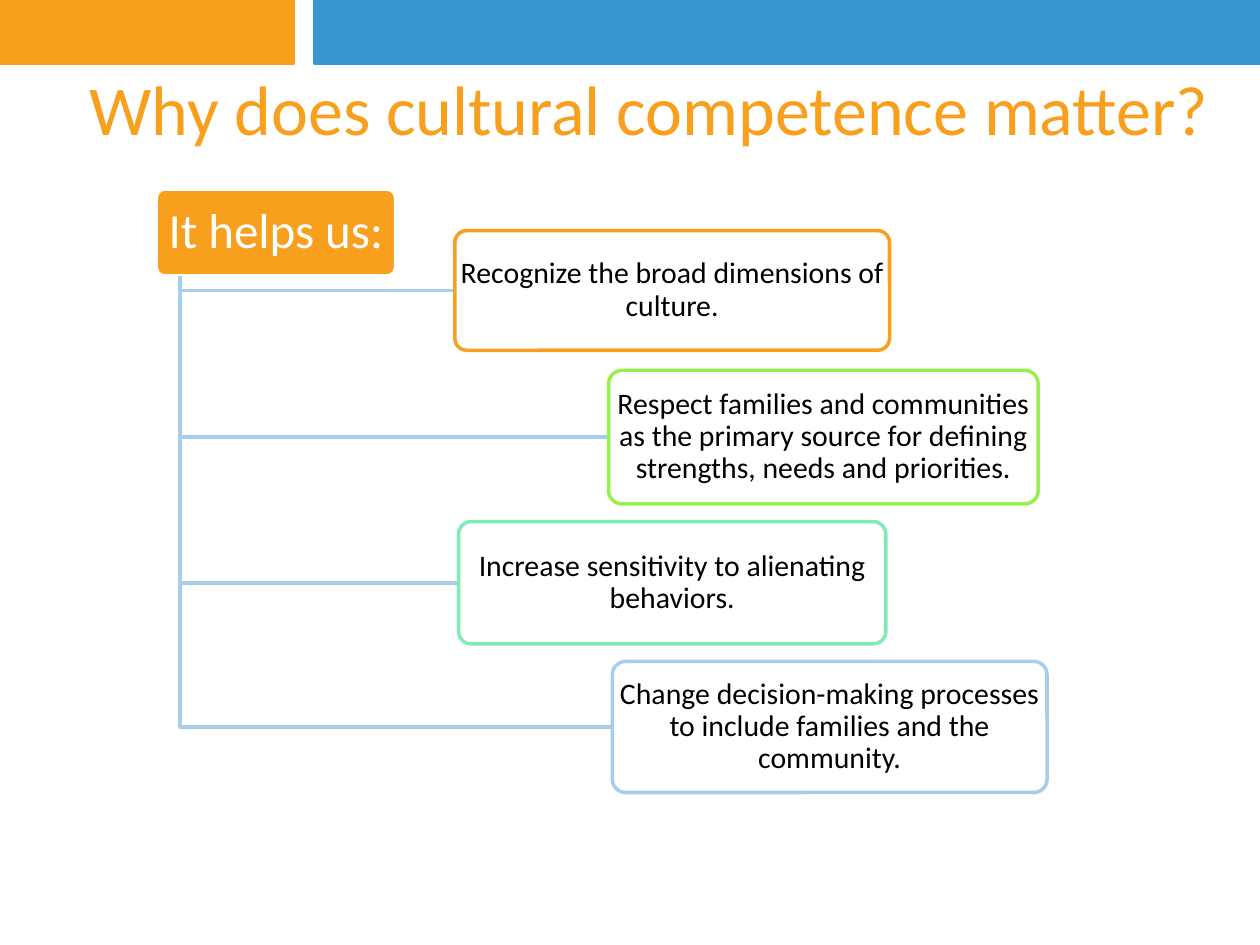
import pptx
import pptx.util
import pptx.dml.color
import pptx.enum.shapes
import pptx.enum.text

Inches, Pt = pptx.util.Inches, pptx.util.Pt
SHAPE = pptx.enum.shapes.MSO_SHAPE
COLORS = {"orange": "F89F1E", "blue": "3A96D0", "pale": "A7CDED", "green": "98F050",
          "mint": "7DEDB5", "white": "FFFFFF", "black": "000000"}
RGB = {name: pptx.dml.color.RGBColor.from_string(value) for name, value in COLORS.items()}

prs = pptx.Presentation()
prs.slide_width, prs.slide_height = Inches(10), Inches(7.5)
s = prs.slides.add_slide(prs.slide_layouts[6])


def add_box(kind, box, fill, line):
    sp = s.shapes.add_shape(kind, *map(Inches, box))
    sp.shadow.inherit = False
    sp.fill.solid()
    sp.fill.fore_color.rgb = RGB[fill]
    sp.line.color.rgb = RGB[line]
    sp.line.width = Pt(2)
    if kind == SHAPE.ROUNDED_RECTANGLE:
        sp.adjustments[0] = 0.1
    return sp


def write(sp, text, size, color, inset, spacing):
    """Put one centred paragraph in a shape; inset is (sides, top and bottom)."""
    tf = sp.text_frame
    tf.word_wrap = True
    tf.vertical_anchor = pptx.enum.text.MSO_ANCHOR.MIDDLE
    tf.margin_left = tf.margin_right = Inches(inset[0])
    tf.margin_top = tf.margin_bottom = Inches(inset[1])
    tf.text = text
    p = tf.paragraphs[0]
    p.alignment = pptx.enum.text.PP_ALIGN.CENTER
    p.line_spacing = spacing
    font = p.runs[0].font
    font.name, font.size, font.color.rgb = "Calibri", Pt(size), RGB[color]


# Header band and title
add_box(SHAPE.RECTANGLE, (0, 0, 2.33, 0.5), "orange", "orange")
add_box(SHAPE.RECTANGLE, (2.5, 0, 7.5, 0.5), "blue", "blue")
title = s.shapes.add_textbox(*map(Inches, (0.4, 0.23, 9.5, 1.25)))
write(title, "Why does cultural competence matter?", 40, "orange", (0.1, 0.05), 1.0)

# Root of the hierarchy; the trunk drops from a tenth of its width
left, top, width, height = 1.24, 1.5, 1.9, 0.69
root = add_box(SHAPE.ROUNDED_RECTANGLE, (left, top, width, height), "orange", "white")
write(root, "It helps us:", 28, "white", (0.04, 0.02), 0.9)
trunk_x, trunk_y = left + width / 10, top + height

# Each reason hangs from the trunk by an elbow line to the middle of its left side
reasons = [
    ("Recognize the broad dimensions of culture.", (3.61, 1.83, 3.45, 0.95), "orange"),
    ("Respect families and communities as the primary source for defining strengths, "
     "needs and priorities.", (4.83, 2.94, 3.41, 1.06), "green"),
    ("Increase sensitivity to alienating behaviors.", (3.64, 4.14, 3.39, 0.97), "mint"),
    ("Change decision-making processes to include families and the community.",
     (4.86, 5.25, 3.45, 1.04), "pale"),
]
for text, box, color in reasons:
    left, top, width, height = box
    middle = top + height / 2
    builder = s.shapes.build_freeform(Inches(trunk_x), Inches(trunk_y))
    builder.add_line_segments([(Inches(trunk_x), Inches(middle)),
                               (Inches(left), Inches(middle))], close=False)
    elbow = builder.convert_to_shape()
    elbow.shadow.inherit = False
    elbow.fill.background()
    elbow.line.color.rgb = RGB["pale"]
    elbow.line.width = Pt(2)

    # The rounded corners already hold the text in a little, so the inset is small
    sp = add_box(SHAPE.ROUNDED_RECTANGLE, box, "white", color)
    write(sp, text, 17, "black", (0.01, 0), 0.9)

prs.save("out.pptx")
